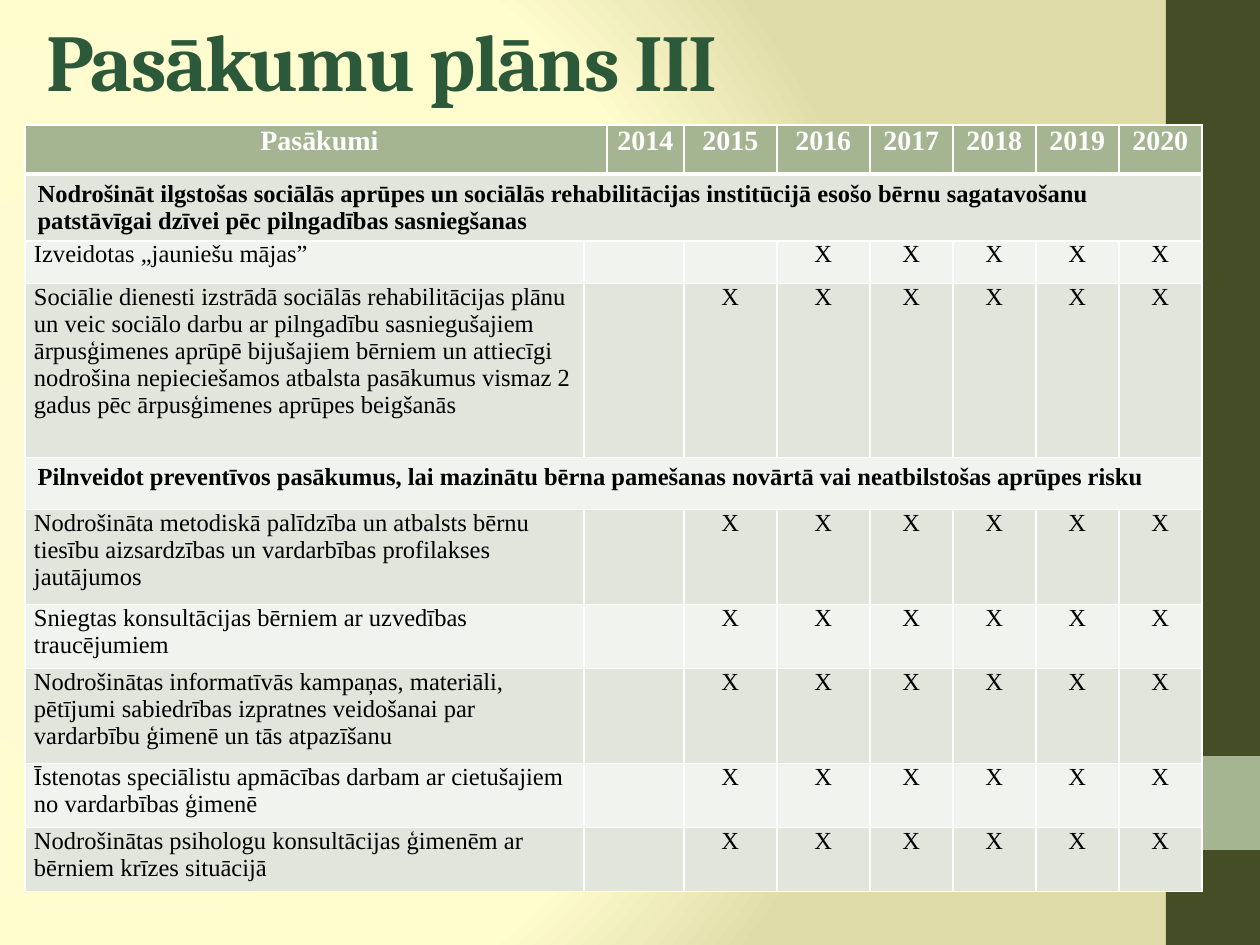
"""Build the action plan slide with its year-by-year table of measures."""
from dataclasses import dataclass

from pptx import Presentation
from pptx.dml.color import RGBColor
from pptx.enum.shapes import MSO_SHAPE
from pptx.enum.text import MSO_ANCHOR, MSO_AUTO_SIZE, PP_ALIGN
from pptx.oxml import parse_xml
from pptx.oxml.ns import nsdecls
from pptx.slide import Slide
from pptx.table import Table, _Cell
from pptx.util import Emu, Pt

PX_PER_INCH = 126
WHITE = RGBColor(0xFF, 0xFF, 0xFF)
BLACK = RGBColor(0x00, 0x00, 0x00)
TITLE_GREEN = RGBColor(0x2D, 0x59, 0x3B)
OLIVE = RGBColor(0x44, 0x4D, 0x26)
SAGE = RGBColor(0xA5, 0xB5, 0x92)
DARK_BAND = RGBColor(0xE1, 0xE5, 0xDC)
LIGHT_BAND = RGBColor(0xF0, 0xF3, 0xEE)
GRADIENT = (
    (0, RGBColor(0xFE, 0xFB, 0xD4)),
    (75, RGBColor(0xFF, 0xFC, 0xCD)),
    (100, RGBColor(0xE0, 0xDC, 0xAA)),
)
YEARS = range(2014, 2021)
COLUMN_WIDTHS = (559, 16, 77, 93, 93, 83, 83, 83, 83)
FIRST_YEAR_COLUMN = 2
HEADER_HEIGHT = 49
CELL_INSET = 9


@dataclass(frozen=True)
class Bar:
    top: int
    height: int
    color: RGBColor


@dataclass(frozen=True)
class Section:
    text: str
    height: int


@dataclass(frozen=True)
class Measure:
    text: str
    height: int
    start: int = 2015


@dataclass(frozen=True)
class TextStyle:
    size: int
    color: RGBColor
    bold: bool = False
    align: PP_ALIGN = PP_ALIGN.LEFT
    font: str = "Times New Roman"


HEADER_STYLE = TextStyle(16, WHITE, True, PP_ALIGN.CENTER)
SECTION_STYLE = TextStyle(14, BLACK, True)
MEASURE_STYLE = TextStyle(14, BLACK)
MARK_STYLE = TextStyle(14, BLACK, align=PP_ALIGN.CENTER)
TITLE_STYLE = TextStyle(46, TITLE_GREEN, True, font="Cambria")

BARS = (Bar(0, 945, OLIVE), Bar(756, 94, SAGE))
PLAN = (
    Section(
        "Nodrošināt ilgstošas sociālās aprūpes un sociālās rehabilitācijas institūcijā "
        "esošo bērnu sagatavošanu patstāvīgai dzīvei pēc pilngadības sasniegšanas", 64),
    Measure("Izveidotas „jauniešu mājas”", 43, 2016),
    Measure(
        "Sociālie dienesti izstrādā sociālās rehabilitācijas plānu un veic sociālo darbu "
        "ar pilngadību sasniegušajiem ārpusģimenes aprūpē bijušajiem bērniem un attiecīgi "
        "nodrošina nepieciešamos atbalsta pasākumus vismaz 2 gadus pēc ārpusģimenes "
        "aprūpes beigšanās", 174),
    Section(
        "Pilnveidot preventīvos pasākumus, lai mazinātu bērna pamešanas novārtā vai "
        "neatbilstošas aprūpes risku", 52),
    Measure(
        "Nodrošināta metodiskā palīdzība un atbalsts bērnu tiesību aizsardzības un "
        "vardarbības profilakses jautājumos", 95),
    Measure("Sniegtas konsultācijas bērniem ar uzvedības traucējumiem", 64),
    Measure(
        "Nodrošinātas informatīvās kampaņas, materiāli, pētījumi sabiedrības izpratnes "
        "veidošanai par vardarbību ģimenē un tās atpazīšanu", 95),
    Measure(
        "Īstenotas speciālistu apmācības darbam ar cietušajiem no vardarbības ģimenē", 64),
    Measure("Nodrošinātas psihologu konsultācijas ģimenēm ar bērniem krīzes situācijā", 64),
)


def px(length: int) -> Emu:
    """Turn pixels into EMU."""
    return Emu(round(length * 914400 / PX_PER_INCH))


def write(frame, text: str, style: TextStyle):
    """Write one styled run into the first paragraph and return it."""
    para = frame.paragraphs[0]
    para.alignment = style.align
    span = para.add_run()
    span.text = text
    span.font.size = Pt(style.size)
    span.font.name = style.font
    span.font.bold = style.bold
    span.font.color.rgb = style.color
    return span


def paint_background(page: Slide) -> None:
    """Fill the page with a radial gradient."""
    fill = page.background.fill
    fill.solid()
    stops = "".join(
        f'<a:gs pos="{percent * 1000}"><a:srgbClr val="{color}"/></a:gs>'
        for percent, color in GRADIENT
    )
    gradient = parse_xml(
        f'<a:gradFill {nsdecls("a")} rotWithShape="1"><a:gsLst>{stops}</a:gsLst>'
        '<a:path path="circle">'
        '<a:fillToRect l="20000" t="50000" r="100000" b="50000"/></a:path></a:gradFill>'
    )
    properties = page.element.cSld.bg.bgPr
    properties.replace(properties[0], gradient)


def draw_bar(page: Slide, bar: Bar) -> None:
    """Draw one block of the right-hand strip."""
    box = page.shapes.add_shape(
        MSO_SHAPE.RECTANGLE, px(1166), px(bar.top), px(94), px(bar.height))
    box.shadow.inherit = False
    box.fill.solid()
    box.fill.fore_color.rgb = bar.color
    box.line.fill.background()


def write_title(page: Slide, text: str) -> None:
    """Place and format the title."""
    title = page.shapes.title
    title.left, title.top, title.width, title.height = map(px, (34, 16, 1050, 87))
    frame = title.text_frame
    frame.auto_size = MSO_AUTO_SIZE.NONE
    frame.vertical_anchor = MSO_ANCHOR.MIDDLE
    span = write(frame, text, TITLE_STYLE)
    span.font._element.set("spc", "-100")


def format_cell(cell: _Cell, color: RGBColor, top: int = 1, bottom: int = 1) -> None:
    """Give a cell white borders and a fill."""
    properties = cell._tc.get_or_add_tcPr()
    for side, points in (("L", 1), ("R", 1), ("T", top), ("B", bottom)):
        properties.append(parse_xml(
            f'<a:ln{side} {nsdecls("a")} w="{Pt(points)}"><a:solidFill>'
            f'<a:srgbClr val="{WHITE}"/></a:solidFill></a:ln{side}>'))
    cell.fill.solid()
    cell.fill.fore_color.rgb = color


def tighten(cell: _Cell) -> None:
    """Set narrow side insets and no vertical insets."""
    cell.margin_left = cell.margin_right = px(CELL_INSET)
    cell.margin_top = cell.margin_bottom = 0


def fill_header(table: Table) -> None:
    """Write the heading row."""
    cells = list(table.rows[0].cells)
    for cell in cells:
        format_cell(cell, SAGE, bottom=3)
        tighten(cell)
    cells[0].merge(cells[1])
    write(cells[0].text_frame, " Pasākumi", HEADER_STYLE)
    for year, cell in zip(YEARS, cells[FIRST_YEAR_COLUMN:]):
        write(cell.text_frame, str(year), HEADER_STYLE)


def fill_row(table: Table, index: int, entry: Section | Measure) -> None:
    """Write one section or measure row."""
    cells = list(table.rows[index].cells)
    for cell in cells:
        format_cell(cell, DARK_BAND if index % 2 else LIGHT_BAND, top=3 if index == 1 else 1)
    if isinstance(entry, Section):
        cells[0].merge(cells[-1])
        write(cells[0].text_frame, entry.text, SECTION_STYLE)
        return
    for cell in cells:
        tighten(cell)
    cells[1].merge(cells[2])
    write(cells[0].text_frame, entry.text, MEASURE_STYLE)
    for year, cell in zip(YEARS, cells[FIRST_YEAR_COLUMN:]):
        if year >= entry.start:
            write(cell.text_frame, "X", MARK_STYLE)


def draw_plan(page: Slide) -> None:
    """Draw the table of measures."""
    heights = [HEADER_HEIGHT, *(entry.height for entry in PLAN)]
    table = page.shapes.add_table(
        len(heights), len(COLUMN_WIDTHS), px(25), px(125),
        px(sum(COLUMN_WIDTHS)), px(sum(heights))).table
    for column, width in zip(table.columns, COLUMN_WIDTHS):
        column.width = px(width)
    for row, height in zip(table.rows, heights):
        row.height = px(height)
    fill_header(table)
    for index, entry in enumerate(PLAN, start=1):
        fill_row(table, index, entry)


def main() -> None:
    """Build and save the deck."""
    deck = Presentation()
    deck.slide_width, deck.slide_height = px(1260), px(945)
    page = deck.slides.add_slide(deck.slide_layouts[5])
    paint_background(page)
    for bar in BARS:
        draw_bar(page, bar)
    write_title(page, "Pasākumu plāns III")
    draw_plan(page)
    deck.save("out.pptx")


if __name__ == "__main__":
    main()
